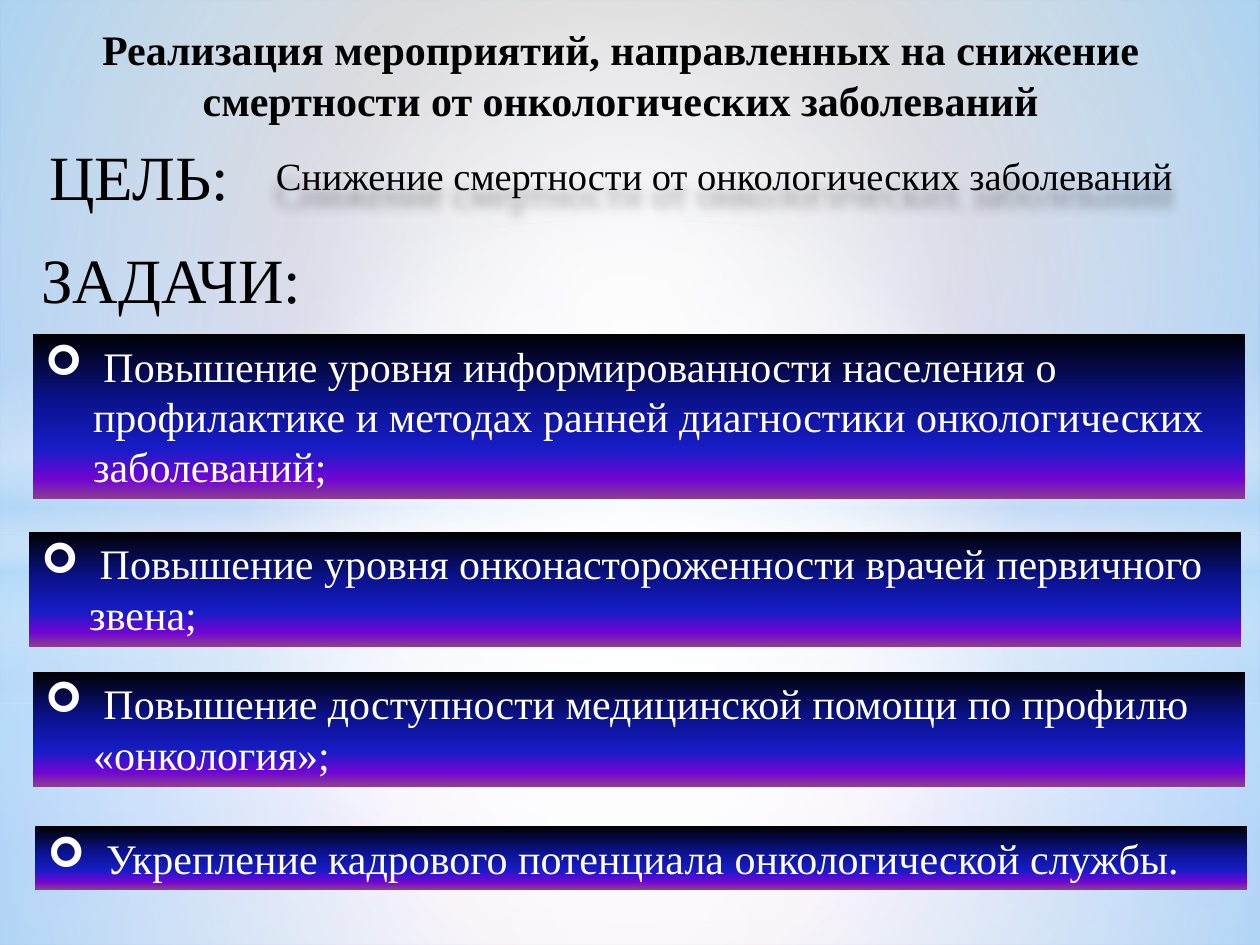
from lxml.etree import SubElement
from pptx import Presentation
from pptx.dml.color import RGBColor
from pptx.enum.shapes import MSO_SHAPE as SHAPE
from pptx.enum.text import MSO_ANCHOR as ANCHOR, MSO_AUTO_SIZE as AUTO, PP_ALIGN as ALIGN
from pptx.oxml.ns import qn
from pptx.util import Inches, Pt

C = {"black": "000000", "white": "FFFFFF", "sky": "B4DCFA",
     "navy": "0A128C", "blue": "181CC7", "violet": "7005D4", "plum": "8C3D91"}
FONT = "Times New Roman"
W, H = 10, 7.5

# Gradient stops: position %, colour, opacity %
NIGHT = [(0, "black", 100), (40, "navy", 100), (70, "blue", 100),
         (88, "violet", 100), (100, "plum", 100)]
LOWER = [(0, "white", 91), (37, "white", 76), (100, "sky", 79)]
UPPER = [(0, "white", 89), (48, "white", 62), (100, "sky", 79)]
BAND = [(0, "white", 0), (29, "white", 30), (45, "sky", 40),
        (55, "white", 26), (65, "sky", 60), (100, "white", 0)]


def paint(owner, fill, stops, radial=False):
    """Give owner's fill a gradient, from the top down or from the centre out."""
    fill.gradient()
    grad = owner._element.find(".//" + qn("a:gradFill"))
    for child in list(grad):
        grad.remove(child)
    gs_list = SubElement(grad, qn("a:gsLst"))
    for pos, colour, opacity in stops:
        gs = SubElement(gs_list, qn("a:gs"), pos=str(pos * 1000))
        clr = SubElement(gs, qn("a:srgbClr"), val=C[colour])
        if opacity < 100:
            SubElement(clr, qn("a:alpha"), val=str(opacity * 1000))
    if radial:
        path = SubElement(grad, qn("a:path"), path="circle")
        SubElement(path, qn("a:fillToRect"), l="50000", t="50000", r="50000", b="50000")
    else:
        SubElement(grad, qn("a:lin"), ang="5400000", scaled="0")


def write(sp, text, size=24, colour="black", bold=False, align=ALIGN.LEFT, bullet=None):
    tf = sp.text_frame
    tf.word_wrap = True
    tf.auto_size = AUTO.SHAPE_TO_FIT_TEXT
    tf.vertical_anchor = ANCHOR.TOP
    p = tf.paragraphs[0]
    p.alignment = align
    p.line_spacing = 1.0
    p.space_before = Pt(0)
    if bullet:
        pPr = p._p.get_or_add_pPr()
        pPr.set("marL", str(Inches(0.38)))
        pPr.set("indent", str(-Inches(0.38)))
        SubElement(pPr, qn("a:buFont"), typeface="Wingdings")
        SubElement(pPr, qn("a:buChar"), char=bullet)
    r = p.add_run()
    r.text = text
    r.font.name, r.font.size, r.font.bold = FONT, Pt(size), bold
    r.font.color.rgb = RGBColor.from_string(C[colour])


prs = Presentation()
prs.slide_width, prs.slide_height = Inches(W), Inches(H)
s = prs.slides.add_slide(prs.slide_layouts[5])
paint(s, s.background.fill, NIGHT)

# Two sets of light layers, each meeting at its own horizon
for horizon, band_top, glow_end in [(5.58, 4.12, 56), (4.23, 2.9, 54)]:
    glow = [(0, "white", 100), (glow_end, "white", 0)]
    for shape, top, height, stops, radial in [
        (SHAPE.RECTANGLE, horizon, H - horizon, LOWER, True),
        (SHAPE.RECTANGLE, 0, horizon, UPPER, True),
        (SHAPE.RECTANGLE, band_top, H / 3, BAND, False),
        (SHAPE.OVAL, 1.75, 5.58, glow, True),
    ]:
        sp = s.shapes.add_shape(shape, 0, Inches(top), Inches(W), Inches(height))
        sp.shadow.inherit = False
        sp.line.fill.background()
        paint(sp, sp.fill, stops, radial)

# Title, brought in front of the layers
title = s.shapes.title
s.shapes._spTree.append(title._element)
title.left, title.top, title.width, title.height = map(Inches, (0.28, 0.14, 9.29, 0.91))
write(title, "Реализация мероприятий, направленных на снижение смертности "
      "от онкологических заболеваний", bold=True, align=ALIGN.CENTER)

# Goal and headings
for box, text, size, align in [
    ((0.28, 1.04, 1.65, 0.71), "ЦЕЛЬ:", 36, ALIGN.CENTER),
    ((0.23, 1.86, 2.52, 0.71), "ЗАДАЧИ:", 36, ALIGN.LEFT),
    ((2.09, 1.16, 7.91, 0.47), "Снижение смертности от онкологических заболеваний", 22, ALIGN.LEFT),
]:
    goal = s.shapes.add_textbox(*map(Inches, box))
    write(goal, text, size, align=align)

# Soft shadow under the goal text
effects = SubElement(goal._element.spPr, qn("a:effectLst"))
shadow = SubElement(effects, qn("a:outerShdw"), blurRad=str(Pt(6)), dist=str(Pt(9)),
                    dir="5400000", algn="t", rotWithShape="0")
clr = SubElement(shadow, qn("a:srgbClr"), val=C["black"])
SubElement(clr, qn("a:alpha"), val="35000")

# Tasks
for left, top, height, text in [
    (0.26, 2.65, 1.31, "Повышение уровня информированности населения о профилактике "
     "и методах ранней диагностики онкологических заболеваний;"),
    (0.23, 4.22, 0.91, "Повышение уровня онконастороженности врачей первичного звена;"),
    (0.26, 5.33, 0.91, "Повышение доступности медицинской помощи по профилю «онкология»;"),
    (0.28, 6.56, 0.5, "Укрепление кадрового потенциала онкологической службы."),
]:
    sp = s.shapes.add_shape(SHAPE.RECTANGLE, *map(Inches, (left, top, 9.62, height)))
    sp.shadow.inherit = False
    sp.line.fill.background()
    paint(sp, sp.fill, NIGHT)
    write(sp, " " + text, colour="white", bullet="➢")

prs.save("out.pptx")
